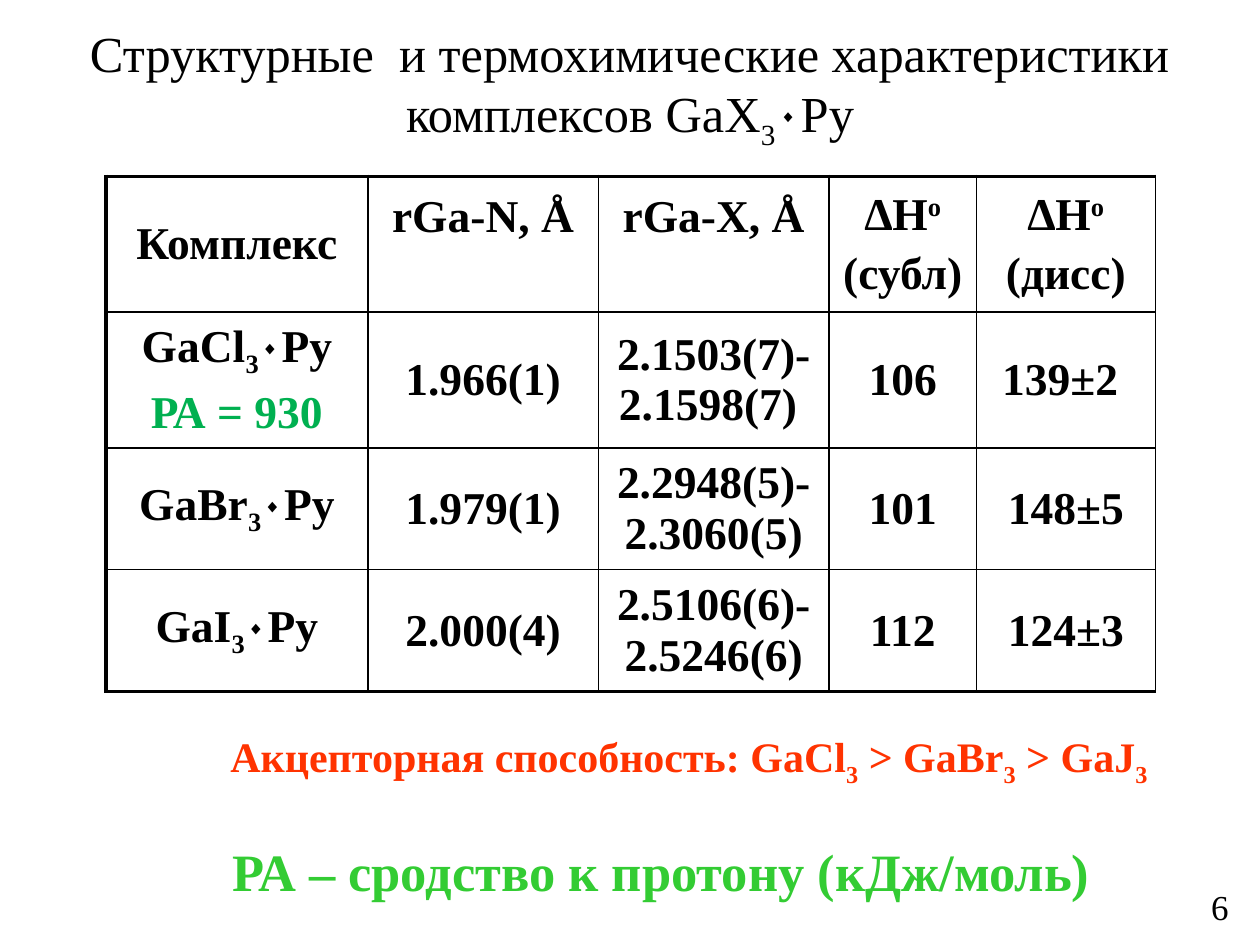
import pptx
import pptx.dml.color
import pptx.enum.text
import pptx.oxml.ns
import pptx.util
from lxml import etree

Inch = pptx.util.Inches
Point = pptx.util.Pt
Align = pptx.enum.text.PP_ALIGN
Anchor = pptx.enum.text.MSO_ANCHOR
FACE = "Times New Roman"
BLACK, GREEN, LIME, RED = "000000", "00B050", "33CC33", "FF3300"

COLS = [2.08, 1.83, 1.83, 1.17, 1.42]
ROWS = [1.08, 1.08, 0.97, 0.97]
DATA = [
    [["Комплекс"], ["rGa-N, Å"], ["rGa-X, Å"],
     ["∆H~o", "(субл) "], ["∆H~o", "(дисс)"]],
    [["GaCl~3~٠Py", "РА = 930"], ["1.966(1)"],
     ["2.1503(7)-2.1598(7) "], ["106"], ["139±2 "]],
    [["GaBr~3~٠Py"], ["1.979(1)"],
     ["2.2948(5)-2.3060(5)"], ["101"], ["148±5"]],
    [["GaI~3~٠Py"], ["2.000(4)"],
     ["2.5106(6)-2.5246(6)"], ["112"], ["124±3"]],
]


def paint(hue):
    return pptx.dml.color.RGBColor.from_string(hue)


def write(para, text, size, hue=BLACK, bold=False, align=Align.LEFT):
    para.alignment = align
    font = para.font
    font.name, font.size, font.bold = FACE, Point(size), bold
    font.color.rgb = paint(hue)
    for i, part in enumerate(text.split("~")):
        run = para.add_run()
        run.text = part
        if i % 2:
            shift = "30000" if part == "o" else "-25000"
            run.font._element.set("baseline", shift)


def edge(cell, side, width):
    props = cell._tc.get_or_add_tcPr()
    line = etree.SubElement(props, pptx.oxml.ns.qn("a:" + side))
    line.set("w", str(Point(width)))
    fill = etree.SubElement(line, pptx.oxml.ns.qn("a:solidFill"))
    tone = etree.SubElement(fill, pptx.oxml.ns.qn("a:srgbClr"))
    tone.set("val", BLACK)


def head(slide, box):
    title = slide.shapes.title
    title.left, title.top, title.width, title.height = map(Inch, box)
    frame = title.text_frame
    frame.auto_size = pptx.enum.text.MSO_AUTO_SIZE.NONE
    frame.vertical_anchor = Anchor.MIDDLE
    frame.margin_top, frame.margin_bottom = 0, Inch(0.48)
    text = "Структурные  и термохимические характеристики комплексов GaX~3~٠Py"
    write(frame.paragraphs[0], text, 28.8, align=Align.CENTER)


def fill_cell(cell, lines, row, col):
    cell.vertical_anchor = Anchor.MIDDLE
    if row == 0 and col in (1, 2):
        cell.vertical_anchor = Anchor.TOP
        cell.margin_top = Inch(0.12)
    frame = cell.text_frame
    for i, text in enumerate(lines):
        para = frame.add_paragraph() if i else frame.paragraphs[0]
        para.space_before = Point(5)
        hue = GREEN if text.startswith("РА") else BLACK
        write(para, text, 26, hue, True, Align.CENTER)
    edge(cell, "lnL", 2.25 if col == 0 else 1)
    edge(cell, "lnR", 1)
    edge(cell, "lnT", 2.25 if row == 0 else 1)
    edge(cell, "lnB", 2.25 if row == len(ROWS) - 1 else 1)
    cell.fill.background()


def grid(slide, box):
    frame = slide.shapes.add_table(len(ROWS), len(COLS), *map(Inch, box))
    table = frame.table
    table.first_row = table.horz_banding = False
    for col, part in zip(table.columns, COLS):
        col.width = Inch(box[2] * part / sum(COLS))
    for row, part in zip(table.rows, ROWS):
        row.height = Inch(box[3] * part / sum(ROWS))
    for r, line in enumerate(DATA):
        for c, lines in enumerate(line):
            fill_cell(table.cell(r, c), lines, r, c)


def note(slide, box, text, size, hue=BLACK, bold=True, align=Align.LEFT):
    frame = slide.shapes.add_textbox(*map(Inch, box)).text_frame
    frame.word_wrap = True
    write(frame.paragraphs[0], text, size, hue, bold, align)


def main():
    deck = pptx.Presentation()
    deck.slide_width, deck.slide_height = Inch(10), Inch(7.5)
    slide = deck.slides.add_slide(deck.slide_layouts[5])
    head(slide, (0.5, 0.3, 9, 1.25))
    grid(slide, (0.84, 1.4, 8.33, 4.09))
    note(slide, (1.75, 6.61, 7.09, 0.6),
         "РА – сродство к протону (кДж/моль)", 30, LIME)
    note(slide, (7.52, 6.98, 2.33, 0.52), "6", 20, BLACK, False, Align.RIGHT)
    note(slide, (1.73, 5.75, 7.78, 0.5),
         "Акцепторная способность: GaCl~3~ > GaBr~3~ > GaJ~3", 24, RED)
    deck.save("out.pptx")


if __name__ == "__main__":
    main()
